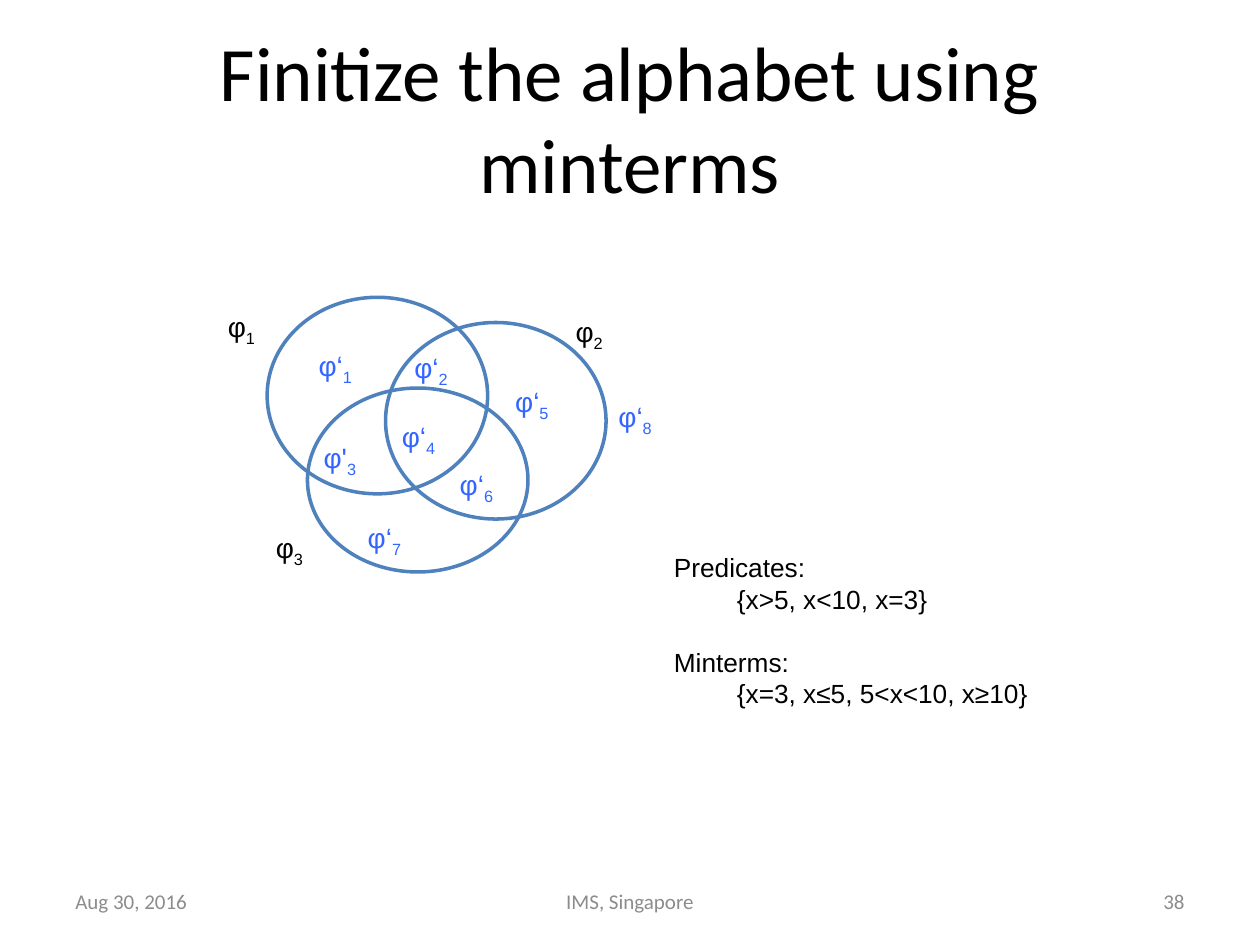
from pptx import Presentation
from pptx.dml.color import RGBColor
from pptx.enum.shapes import MSO_SHAPE
from pptx.enum.text import MSO_ANCHOR, PP_ALIGN
from pptx.util import Inches, Pt

OVAL = MSO_SHAPE.OVAL
TOP, MIDDLE = MSO_ANCHOR.TOP, MSO_ANCHOR.MIDDLE
LEFT, CENTER, RIGHT = PP_ALIGN.LEFT, PP_ALIGN.CENTER, PP_ALIGN.RIGHT

BLACK, GRAY, BLUE, OUTLINE = "000000", "8C8C8C", "3366FF", "4F81BD"

# Offsets from the top left corner of the diagram: left, top, width, height
CIRCLES = [
    (1.35, 0.2, 1.75, 1.56),
    (0.41, 0, 1.75, 1.56),
    (0.73, 0.72, 1.75, 1.46),
]
# Symbol, subscript, colour, left, top
REGION_LABELS = [
    ("φ", "1", BLACK, 0, 0.05),
    ("φ", "2", BLACK, 2.76, 0.09),
    ("φ", "3", BLACK, 0.38, 1.8),
    ("φ‘", "1", BLUE, 0.72, 0.36),
    ("φ‘", "2", BLUE, 1.48, 0.37),
    ("φ'", "3", BLUE, 0.76, 1.09),
    ("φ‘", "4", BLUE, 1.38, 0.92),
    ("φ‘", "5", BLUE, 2.28, 0.64),
    ("φ‘", "6", BLUE, 1.84, 1.3),
    ("φ‘", "7", BLUE, 1.11, 1.72),
    ("φ‘", "8", BLUE, 3.1, 0.76),
]


def color(hex_string):
    return RGBColor.from_string(hex_string)


def format_run(run, font, size, hex_string):
    run.font.name = font
    run.font.size = Pt(size)
    run.font.color.rgb = color(hex_string)


def add_text(slide, box, text, font, size, hex_string, align=LEFT, anchor=TOP):
    shape = slide.shapes.add_textbox(*map(Inches, box))
    text_frame = shape.text_frame
    text_frame.word_wrap = True
    text_frame.vertical_anchor = anchor
    text_frame.text = text
    for paragraph in text_frame.paragraphs:
        paragraph.alignment = align
        for run in paragraph.runs:
            format_run(run, font, size, hex_string)
    return text_frame


def add_title(slide, box):
    add_text(slide, box, "Finitize the alphabet using minterms",
             "Calibri", 44, BLACK, CENTER, MIDDLE)


def add_venn_diagram(slide, left, top):
    for x, y, width, height in CIRCLES:
        circle = slide.shapes.add_shape(
            OVAL, Inches(left + x), Inches(top + y), Inches(width), Inches(height))
        circle.shadow.inherit = False
        circle.fill.background()
        circle.line.color.rgb = color(OUTLINE)
        circle.line.width = Pt(2)
    for symbol, index, hex_string, x, y in REGION_LABELS:
        box = (left + x, top + y, 0.69, 0.37)
        text_frame = add_text(slide, box, symbol, "Arial", 16, hex_string)
        subscript = text_frame.paragraphs[0].add_run()
        subscript.text = index
        format_run(subscript, "Arial", 16, hex_string)
        subscript.font._element.set("baseline", "-25000")


def add_example(slide, box):
    lines = ["Predicates:", "\t{x>5, x<10, x=3}",
             "Minterms:", "\t{x=3, x≤5, 5<x<10, x≥10}"]
    text_frame = add_text(slide, box, "\n".join(lines), "Arial", 15, BLACK)
    text_frame.paragraphs[2].space_before = Pt(18)


def add_footer(slide, left, top, width):
    side, middle, height = 2.33, 3.17, 0.4
    parts = [
        ("Aug 30, 2016", left, side, LEFT),
        ("IMS, Singapore", left + (width - middle) / 2, middle, CENTER),
        ("38", left + width - side, side, RIGHT),
    ]
    for text, x, part_width, align in parts:
        add_text(slide, (x, top, part_width, height), text,
                 "Calibri", 12, GRAY, align, MIDDLE)


def main():
    presentation = Presentation()
    presentation.slide_width = Inches(10)
    presentation.slide_height = Inches(7.5)
    slide = presentation.slides.add_slide(presentation.slide_layouts[6])
    add_title(slide, (0.5, 0.3, 9, 1.25))
    add_venn_diagram(slide, 1.71, 2.36)
    add_example(slide, (5.25, 4.33, 4.11, 1.54))
    add_footer(slide, 0.5, 6.95, 9)
    presentation.save("out.pptx")


if __name__ == "__main__":
    main()
